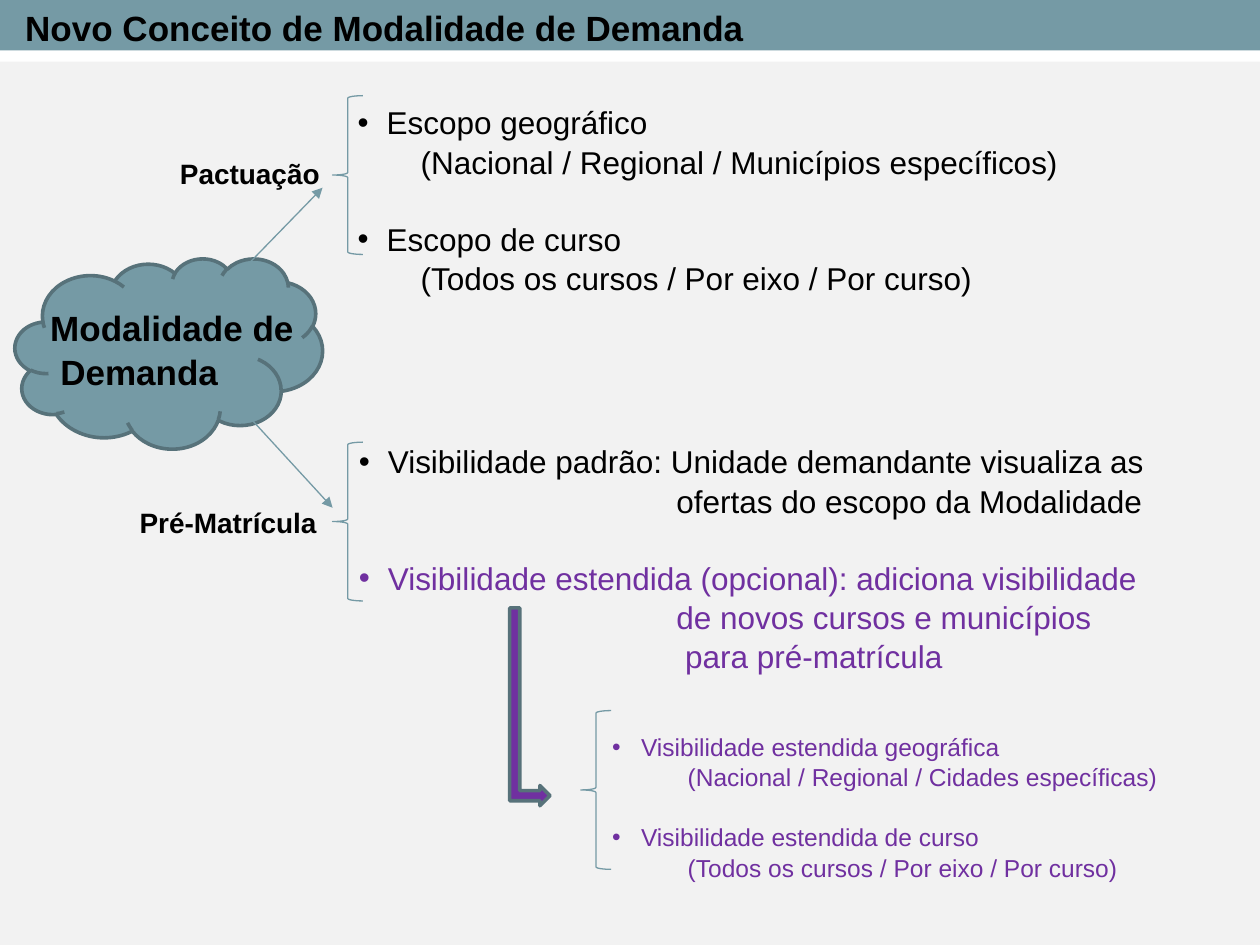
from pptx import Presentation
from pptx.dml.color import RGBColor
from pptx.enum.shapes import MSO_CONNECTOR, MSO_SHAPE
from pptx.enum.text import MSO_ANCHOR, MSO_AUTO_SIZE, PP_ALIGN
from pptx.oxml.ns import qn
from pptx.util import Inches, Pt
from lxml import etree

RECTANGLE, CLOUD = MSO_SHAPE.RECTANGLE, MSO_SHAPE.CLOUD
LEFT_BRACE, BENT_ARROW = MSO_SHAPE.LEFT_BRACE, MSO_SHAPE.BENT_UP_ARROW
STRAIGHT, TOP, LEFT = MSO_CONNECTOR.STRAIGHT, MSO_ANCHOR.TOP, PP_ALIGN.LEFT
NO_AUTOFIT = MSO_AUTO_SIZE.NONE

BACKGROUND = RGBColor(0xF2, 0xF2, 0xF2)
WHITE = RGBColor(0xFF, 0xFF, 0xFF)
BLACK = RGBColor(0, 0, 0)
TEAL = RGBColor(0x75, 0x9A, 0xA5)
DARK_TEAL = RGBColor(0x57, 0x72, 0x7A)
PURPLE = RGBColor(0x70, 0x30, 0xA0)

FONT = "Arial"
BULLET_INDENT = 0.23
LINE_SPACING = 1.04
GAP_RATIO = 1.2


def write_paragraph(paragraph, text, size=18, color=BLACK, bold=False,
                    indent=0, bullet=False, gap=False):
    paragraph.alignment = LEFT
    paragraph.line_spacing = LINE_SPACING
    paragraph.space_before = Pt(size * GAP_RATIO if gap else 0)
    run = paragraph.add_run()
    run.text = text
    run.font.name, run.font.size, run.font.bold = FONT, Pt(size), bold
    run.font.color.rgb = color
    properties = paragraph._p.get_or_add_pPr()
    properties.set("marL", str(Inches(BULLET_INDENT if bullet else indent)))
    properties.set("indent", str(Inches(-BULLET_INDENT if bullet else 0)))
    if bullet:
        etree.SubElement(properties, qn("a:buFont")).set("typeface", FONT)
        etree.SubElement(properties, qn("a:buChar")).set("char", "•")


class DiagramSlide:
    """Holds the style and the current slide, and draws its elements."""

    def __init__(self, presentation):
        self.slide = presentation.slides.add_slide(presentation.slide_layouts[5])
        self.shapes = self.slide.shapes
        fill = self.slide.background.fill
        fill.solid()
        fill.fore_color.rgb = BACKGROUND

    def fill_frame(self, shape, lines, **style):
        frame = shape.text_frame
        frame.word_wrap = True
        frame.auto_size = NO_AUTOFIT
        frame.vertical_anchor = TOP
        for index, (text, options) in enumerate(lines):
            paragraph = frame.add_paragraph() if index else frame.paragraphs[0]
            write_paragraph(paragraph, text, **{**style, **options})

    def title(self, text, left, top, width, height):
        title = self.shapes.title
        title.left, title.top = Inches(left), Inches(top)
        title.width, title.height = Inches(width), Inches(height)
        self.fill_frame(title, [(text, {})], size=20, bold=True)
        title._element.getparent().append(title._element)

    def text(self, lines, left, top, width, height, **style):
        box = self.shapes.add_textbox(
            Inches(left), Inches(top), Inches(width), Inches(height))
        self.fill_frame(box, lines, **style)

    def shape(self, kind, left, top, width, height, fill=None, line=None,
              line_width=2.08, rotation=0):
        shape = self.shapes.add_shape(
            kind, Inches(left), Inches(top), Inches(width), Inches(height))
        shape.shadow.inherit = False
        shape.rotation = rotation
        for target, color in ((shape.fill, fill), (shape.line.fill, line)):
            if color is None:
                target.background()
            else:
                target.solid()
                target.fore_color.rgb = color
        if line is not None:
            shape.line.width = Pt(line_width)

    def brace(self, left, top):
        self.shape(LEFT_BRACE, left, top, 0.24, 1.26, line=TEAL, line_width=0.75)

    def arrow(self, start, end):
        connector = self.shapes.add_connector(
            STRAIGHT, *(Inches(value) for value in (*start, *end)))
        connector.line.color.rgb = TEAL
        connector.line.width = Pt(0.75)
        etree.SubElement(connector.line._get_or_add_ln(),
                         qn("a:tailEnd")).set("type", "triangle")
        etree.SubElement(connector._element.spPr, qn("a:effectLst"))


def main():
    presentation = Presentation()
    presentation.slide_width, presentation.slide_height = Inches(10), Inches(7.5)
    diagram = DiagramSlide(presentation)
    item = {"bullet": True}
    next_item = {"bullet": True, "gap": True}
    purple_item = {**next_item, "color": PURPLE}

    diagram.shape(RECTANGLE, 0, 0.24, 10, 0.25, fill=WHITE)
    diagram.shape(RECTANGLE, 0, 0, 10, 0.4, fill=TEAL)
    diagram.title("Novo Conceito de Modalidade de Demanda", 0.1, -0.01, 6.11, 0.44)

    diagram.shape(CLOUD, 0.12, 2.05, 2.44, 1.51, fill=TEAL, line=DARK_TEAL)
    diagram.text([("Modalidade de", {}), ("Demanda", {"indent": 0.08})],
                 0.3, 2.37, 2.15, 0.77, size=20, bold=True)
    diagram.text([("Pactuação", {})], 1.33, 1.18, 1.32, 0.37, size=16, bold=True)
    diagram.text([("Pré-Matrícula", {})], 1.01, 3.95, 1.63, 0.37, size=16, bold=True)

    diagram.text([
        ("Escopo geográfico", item),
        ("(Nacional / Regional / Municípios específicos)", {"indent": 0.5}),
        ("Escopo de curso", next_item),
        ("(Todos os cursos / Por eixo / Por curso)", {"indent": 0.5}),
    ], 2.74, 0.76, 5.81, 1.92)
    diagram.text([
        ("Visibilidade padrão: Unidade demandante visualiza as", item),
        ("ofertas do escopo da Modalidade", {"indent": 2.52}),
        ("Visibilidade estendida (opcional): adiciona visibilidade", purple_item),
        ("de novos cursos e municípios", {"indent": 2.52, "color": PURPLE}),
        ("para pré-matrícula", {"indent": 2.59, "color": PURPLE}),
    ], 2.75, 3.45, 6.56, 1.92)
    diagram.text([
        ("Visibilidade estendida geográfica", item),
        ("(Nacional / Regional / Cidades específicas)", {"indent": 0.6}),
        ("Visibilidade estendida de curso", next_item),
        ("(Todos os cursos / Por eixo / Por curso)", {"indent": 0.6}),
    ], 4.76, 5.75, 4.56, 1.51, size=14, color=PURPLE)

    diagram.arrow((1.85, 2.22), (2.56, 1.49))
    diagram.arrow((1.85, 3.17), (2.64, 4.03))
    for left, top in ((2.64, 0.76), (2.64, 3.51), (4.61, 5.64)):
        diagram.brace(left, top)
    diagram.shape(BENT_ARROW, 3.42, 5.45, 1.57, 0.32, fill=PURPLE,
                  line=DARK_TEAL, rotation=90)

    presentation.save("out.pptx")


if __name__ == "__main__":
    main()
